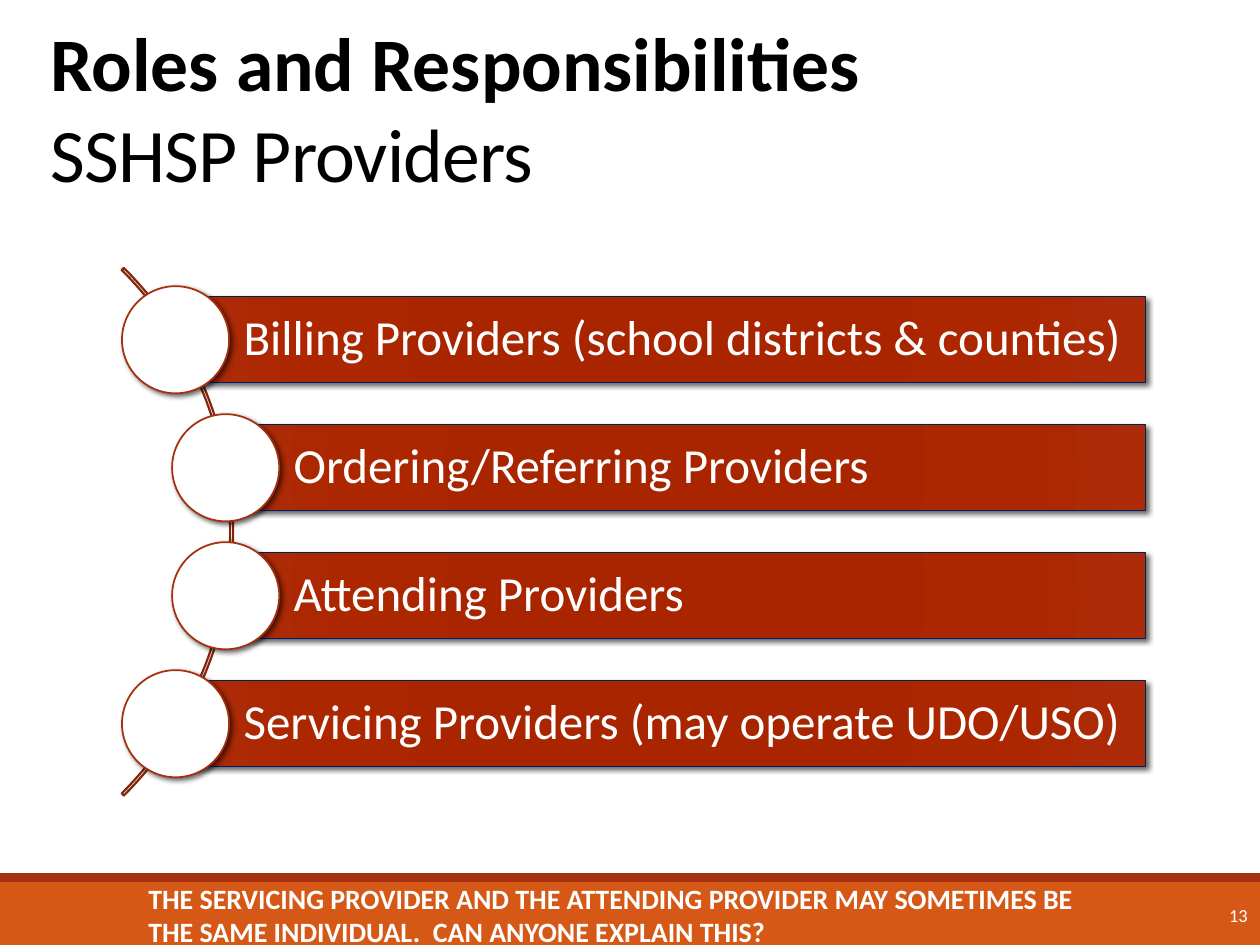
"""Build the slide on provider roles and responsibilities."""
from lxml import etree
from pptx import Presentation
from pptx.dml.color import RGBColor
from pptx.enum.shapes import MSO_SHAPE
from pptx.enum.text import MSO_ANCHOR, MSO_AUTO_SIZE, PP_ALIGN
from pptx.oxml.ns import qn
from pptx.util import Cm, Pt

RECT, OVAL, ARC = MSO_SHAPE.RECTANGLE, MSO_SHAPE.OVAL, MSO_SHAPE.BLOCK_ARC
MIDDLE, BOTTOM = MSO_ANCHOR.MIDDLE, MSO_ANCHOR.BOTTOM
LEFT, RIGHT = PP_ALIGN.LEFT, PP_ALIGN.RIGHT
FIXED = MSO_AUTO_SIZE.NONE

WHITE = RGBColor(0xFF, 0xFF, 0xFF)
BLACK = RGBColor(0, 0, 0)
ORANGE = RGBColor(0xD5, 0x58, 0x16)
RUST = RGBColor(0xA5, 0x30, 0x0F)
BROWN = RGBColor(0x84, 0x26, 0x0C)
NAVY = RGBColor(0, 0x20, 0x60)
SHADES = [(0, "A82500"), (34, "A92500"), (70, "AC2600"), (100, "AC2C07")]
FONT = "Calibri"

TITLE = ["Roles and Responsibilities", "SSHSP Providers"]
ROLES = [
    ("Billing Providers (school districts & counties)", 3.54),
    ("Ordering/Referring Providers", 4.55),
    ("Attending Providers", 4.55),
    ("Servicing Providers (may operate UDO/USO)", 3.54),
]
BANDS = [(17.78, 1.27, ORANGE), (17.6, 0.18, RUST)]
NOTE = ("THE SERVICING PROVIDER AND THE ATTENDING PROVIDER MAY SOMETIMES BE "
        "THE SAME INDIVIDUAL.  CAN ANYONE EXPLAIN THIS?")
FOOTER = [(NOTE, 2.74, 19.89, 16, True, LEFT), ("13", 22.66, 2.74, 10.5, False, RIGHT)]

WIDE, TALL = 25.4, 19.05
MID, STEP = 10.72, 2.58
BAR, DISC, EDGE = 1.73, 2.16, 23.09
HUB, SPAN = -2.82, 15.04


def add_run(para, text, size, color, bold=False):
    run = para.add_run()
    run.text = text
    font = run.font
    font.name, font.size, font.bold = FONT, Pt(size), bold
    font.color.rgb = color
    return run


def set_frame(frame, anchor, pads):
    frame.word_wrap = True
    frame.auto_size = FIXED
    frame.vertical_anchor = anchor
    (frame.margin_left, frame.margin_top,
     frame.margin_right, frame.margin_bottom) = map(Cm, pads)


def add_form(slide, kind, box, fill=None, line=None, width=1):
    form = slide.shapes.add_shape(kind, *map(Cm, box))
    form.shadow.inherit = False
    if fill is not None:
        form.fill.solid()
        form.fill.fore_color.rgb = fill
    if line is None:
        form.line.fill.background()
    else:
        form.line.color.rgb = line
        form.line.width = Pt(width)
    return form


def add_node(parent, tag, **attrs):
    return etree.SubElement(parent, qn(tag), {k: str(v) for k, v in attrs.items()})


def shade(form):
    grad = etree.Element(qn("a:gradFill"), rotWithShape="1")
    stops = add_node(grad, "a:gsLst")
    for pos, color in SHADES:
        stop = add_node(stops, "a:gs", pos=pos * 1000)
        add_node(stop, "a:srgbClr", val=color)
    way = add_node(grad, "a:path", path="circle")
    add_node(way, "a:fillToRect", l=100000, t=100000, r=100000, b=100000)
    form._element.spPr.find(qn("a:prstGeom")).addnext(grad)


def cast(form):
    effects = form._element.spPr.find(qn("a:effectLst"))
    drop = add_node(effects, "a:outerShdw", blurRad=Pt(3), dist=Pt(2),
                    dir=45 * 60000, algn="ctr", rotWithShape=0)
    tone = add_node(drop, "a:srgbClr", val="000000")
    add_node(tone, "a:alpha", val=60000)


def add_title(slide):
    title = slide.shapes.title
    title.left, title.top, title.width, title.height = map(Cm, (0, 0, 23.29, 4.11))
    set_frame(title.text_frame, BOTTOM, (1.02, 0.13, 0.25, 0.13))
    para = title.text_frame.paragraphs[0]
    para.alignment = LEFT
    add_run(para, TITLE[0], 43.2, BLACK, True)
    para.add_line_break()
    sub = add_run(para, TITLE[1], 43.2, BLACK)
    sub.font._element.set("spc", "-50")


def add_role(slide, text, x, y):
    bar = add_form(slide, RECT, (x, y - BAR / 2, EDGE - x, BAR), None, NAVY, 0.75)
    shade(bar)
    cast(bar)
    set_frame(bar.text_frame, MIDDLE, (1.37, 0.2, 0.2, 0.2))
    para = bar.text_frame.paragraphs[0]
    para.alignment = LEFT
    para.line_spacing = 0.9
    add_run(para, text, 28, WHITE)
    disc = add_form(slide, OVAL, (x - DISC / 2, y - DISC / 2, DISC, DISC), WHITE, RUST)
    cast(disc)


def main():
    deck = Presentation()
    deck.slide_width, deck.slide_height = Cm(WIDE), Cm(TALL)
    slide = deck.slides.add_slide(deck.slide_layouts[5])
    for top, high, color in BANDS:
        add_form(slide, RECT, (0, top, WIDE, high), color)
    add_title(slide)

    arc = add_form(slide, ARC, (HUB - SPAN / 2, MID - SPAN / 2, SPAN, SPAN),
                   None, BROWN, 1.25)
    arc.fill.background()
    for i, turn in enumerate((189, 27, 0.004)):
        arc.adjustments[i] = turn

    first = MID - STEP * (len(ROLES) - 1) / 2
    for i, (text, x) in enumerate(ROLES):
        add_role(slide, text, x, first + i * STEP)

    for text, left, width, size, bold, align in FOOTER:
        box = slide.shapes.add_textbox(*map(Cm, (left, 17.93, width, 1.02)))
        set_frame(box.text_frame, MIDDLE, (0.25, 0.13, 0.25, 0.13))
        para = box.text_frame.paragraphs[0]
        para.alignment = align
        add_run(para, text, size, WHITE, bold)
    deck.save("out.pptx")


if __name__ == "__main__":
    main()
